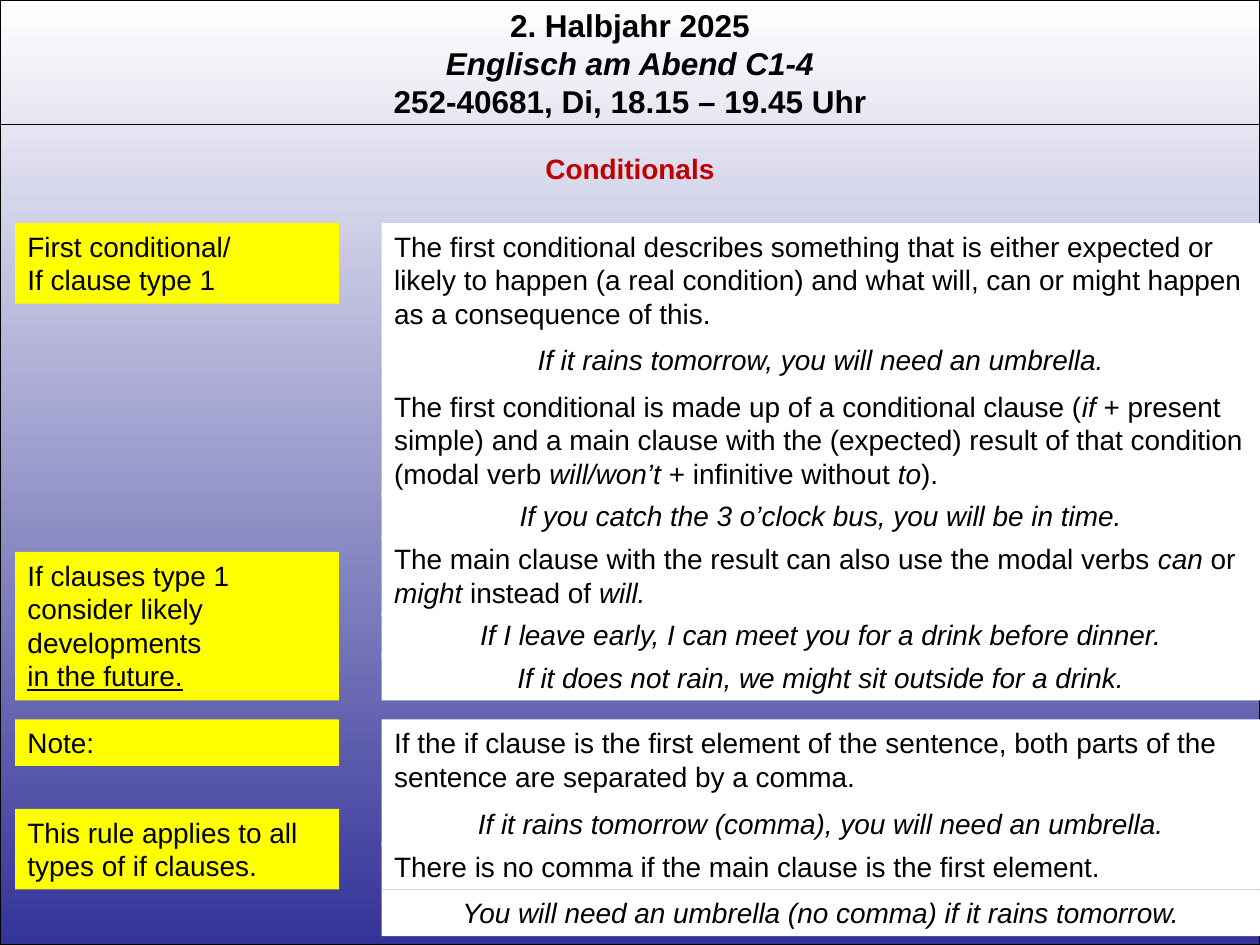
from dataclasses import dataclass

from lxml.etree import SubElement
from pptx import Presentation
from pptx.dml.color import RGBColor as RGB
from pptx.enum.shapes import MSO_CONNECTOR as CONN, MSO_SHAPE as SHAPE
from pptx.enum.text import MSO_ANCHOR as ANCHOR, PP_ALIGN as ALIGN
from pptx.oxml.ns import qn
from pptx.util import Inches, Pt


@dataclass(frozen=True)
class Theme:
    font: str = "Arial"
    header_size: int = 18
    body_size: int = 16
    text: RGB = RGB(0, 0, 0)
    accent: RGB = RGB(0xC0, 0, 0)
    label: RGB = RGB(0xFF, 0xFF, 0)
    panel: RGB = RGB(0xFF, 0xFF, 0xFF)
    bg_top: RGB = RGB(0xFF, 0xFF, 0xFF)
    bg_bottom: RGB = RGB(0x33, 0x33, 0x99)
    line_width: float = 0.75


SLIDE_W, SLIDE_H = 10, 7.5
HEADER_LINE_Y = 0.99
LABEL_X, LABEL_W = 0.12, 2.57
PANEL_X = 3.03
PANEL_W = SLIDE_W - PANEL_X

HEADER = ["2. Halbjahr 2025", "*Englisch am Abend C1-4*",
          "252-40681, Di, 18.15 – 19.45 Uhr"]

# Top, line count, paragraphs
LABELS = [
    (1.77, 2, ["First conditional/", "If clause type 1"]),
    (4.38, 4, ["If clauses type 1 consider likely developments",
               "_in the future."]),
    (5.71, 1, ["Note:"]),
    (6.42, 2, ["This rule applies to all types of if clauses."]),
]

# Top, text; later explanations overlap the example boxes slightly
EXAMPLES = [
    (2.67, "If it rains tomorrow, you will need an umbrella."),
    (3.91, "If you catch the 3 o’clock bus, you will be in time."),
    (4.85, "If I leave early, I can meet you for a drink before dinner."),
    (5.19, "If it does not rain, we might sit outside for a drink."),
    (6.35, "If it rains tomorrow (comma), you will need an umbrella."),
    (7.06, "You will need an umbrella (no comma) if it rains tomorrow."),
]

# Top, line count, text
EXPLANATIONS = [
    (1.77, 3, "The first conditional describes something that is either "
              "expected or likely to happen (a real condition) and what will, "
              "can or might happen as a consequence of this."),
    (3.04, 3, "The first conditional is made up of a conditional clause "
              "(*if *+ present simple) and a main clause with the (expected) "
              "result of that condition (modal verb *will/won’t *+ infinitive "
              "without *to*)."),
    (4.25, 2, "The main clause with the result can also use the modal verbs "
              "*can* or *might* instead of *will.*"),
    (5.71, 2, "If the if clause is the first element of the sentence, both "
              "parts of the sentence are separated by a comma."),
    (6.69, 1, "There is no comma if the main clause is the first element."),
]


def box_height(lines):
    return 0.1 + 0.27 * lines


def write(tf, paragraphs, *, font, size, color, align=ALIGN.LEFT, bold=False):
    """Fill a text frame; *...* is italic, a leading _ underlines a paragraph."""
    tf.word_wrap = True
    tf.vertical_anchor = ANCHOR.TOP
    for i, text in enumerate(paragraphs):
        p = tf.paragraphs[0] if i == 0 else tf.add_paragraph()
        p.alignment = align
        underlined = text.startswith("_")
        for j, part in enumerate(text.removeprefix("_").split("*")):
            if not part:
                continue
            r = p.add_run()
            r.text = part
            r.font.name, r.font.size = font, Pt(size)
            r.font.color.rgb = color
            r.font.bold = bold
            r.font.italic = j % 2 == 1
            r.font.underline = underlined


class SlideBuilder:
    def __init__(self, slide, theme):
        self.s, self.theme = slide, theme

    def rect(self, x, y, w, h):
        sp = self.s.shapes.add_shape(
            SHAPE.RECTANGLE, Inches(x), Inches(y), Inches(w), Inches(h))
        sp.shadow.inherit = False
        return sp

    def outline(self, line):
        line.color.rgb = self.theme.text
        line.width = Pt(self.theme.line_width)

    def background(self):
        sp = self.rect(0, 0, SLIDE_W, SLIDE_H)
        sp.fill.gradient()
        sp.fill.gradient_angle = 270
        colors = (self.theme.bg_top, self.theme.bg_bottom)
        for position, (stop, color) in enumerate(zip(sp.fill.gradient_stops, colors)):
            stop.position, stop.color.rgb = position, color
        self.outline(sp.line)

    def rule(self, y):
        ln = self.s.shapes.add_connector(
            CONN.STRAIGHT, 0, Inches(y), Inches(SLIDE_W), Inches(y))
        self.outline(ln.line)
        SubElement(ln._element.spPr, qn("a:effectLst"))

    def heading(self, y, h, paragraphs, size, color):
        sp = self.s.shapes.add_textbox(0, Inches(y), Inches(SLIDE_W), Inches(h))
        write(sp.text_frame, paragraphs, font=self.theme.font, size=size,
              color=color, align=ALIGN.CENTER, bold=True)

    def box(self, x, y, w, lines, paragraphs, fill, align=ALIGN.LEFT):
        sp = self.rect(x, y, w, box_height(lines))
        sp.fill.solid()
        sp.fill.fore_color.rgb = fill
        sp.line.fill.background()
        write(sp.text_frame, paragraphs, font=self.theme.font,
              size=self.theme.body_size, color=self.theme.text, align=align)

    def label(self, y, lines, paragraphs):
        self.box(LABEL_X, y, LABEL_W, lines, paragraphs, self.theme.label)

    def explanation(self, y, lines, text):
        self.box(PANEL_X, y, PANEL_W, lines, [text], self.theme.panel)

    def example(self, y, text):
        self.box(PANEL_X, y, PANEL_W, 1, [f"*{text}*"], self.theme.panel,
                 ALIGN.CENTER)


def main():
    prs = Presentation()
    prs.slide_width, prs.slide_height = Inches(SLIDE_W), Inches(SLIDE_H)
    theme = Theme()
    b = SlideBuilder(prs.slides.add_slide(prs.slide_layouts[6]), theme)

    b.background()
    b.heading(0, 1.01, HEADER, theme.header_size, theme.text)
    b.rule(HEADER_LINE_Y)
    b.heading(1.15, box_height(1), ["Conditionals"], theme.body_size, theme.accent)
    for row in EXAMPLES:
        b.example(*row)
    for row in EXPLANATIONS:
        b.explanation(*row)
    for row in LABELS:
        b.label(*row)

    prs.save("out.pptx")


if __name__ == "__main__":
    main()
